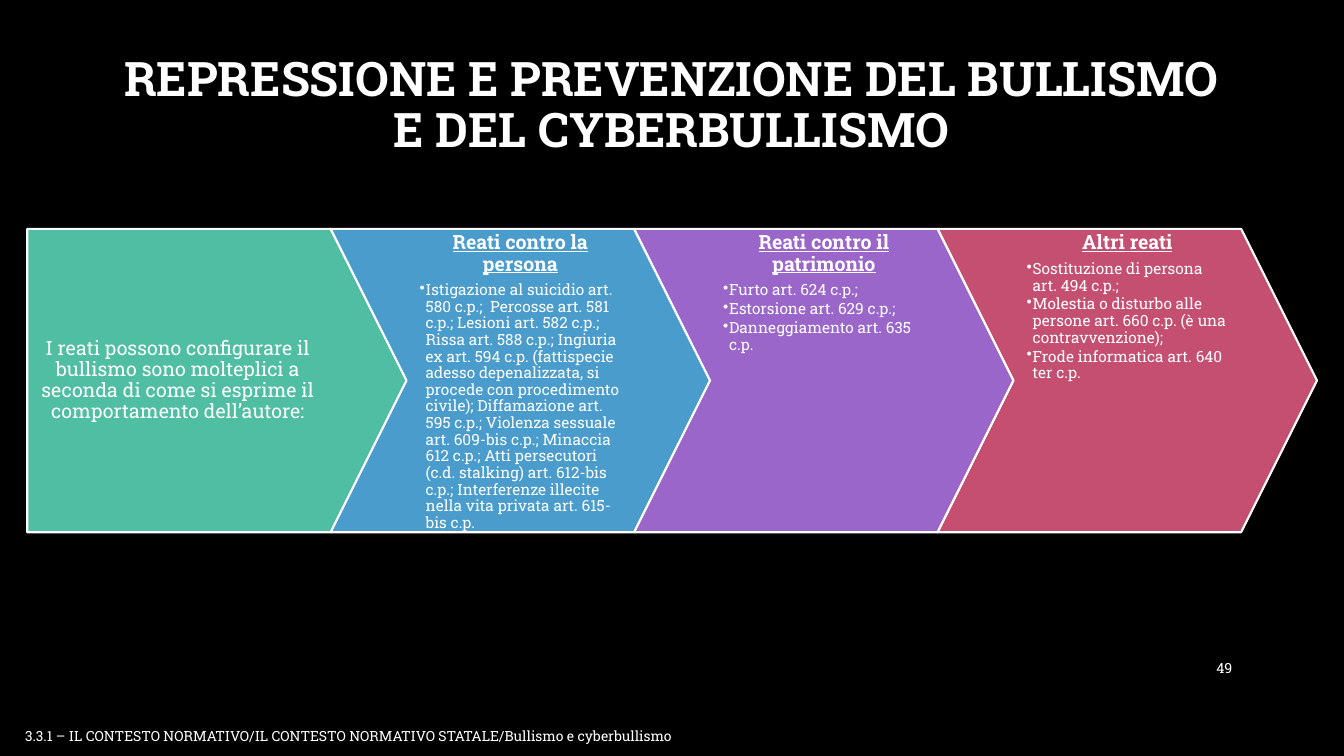
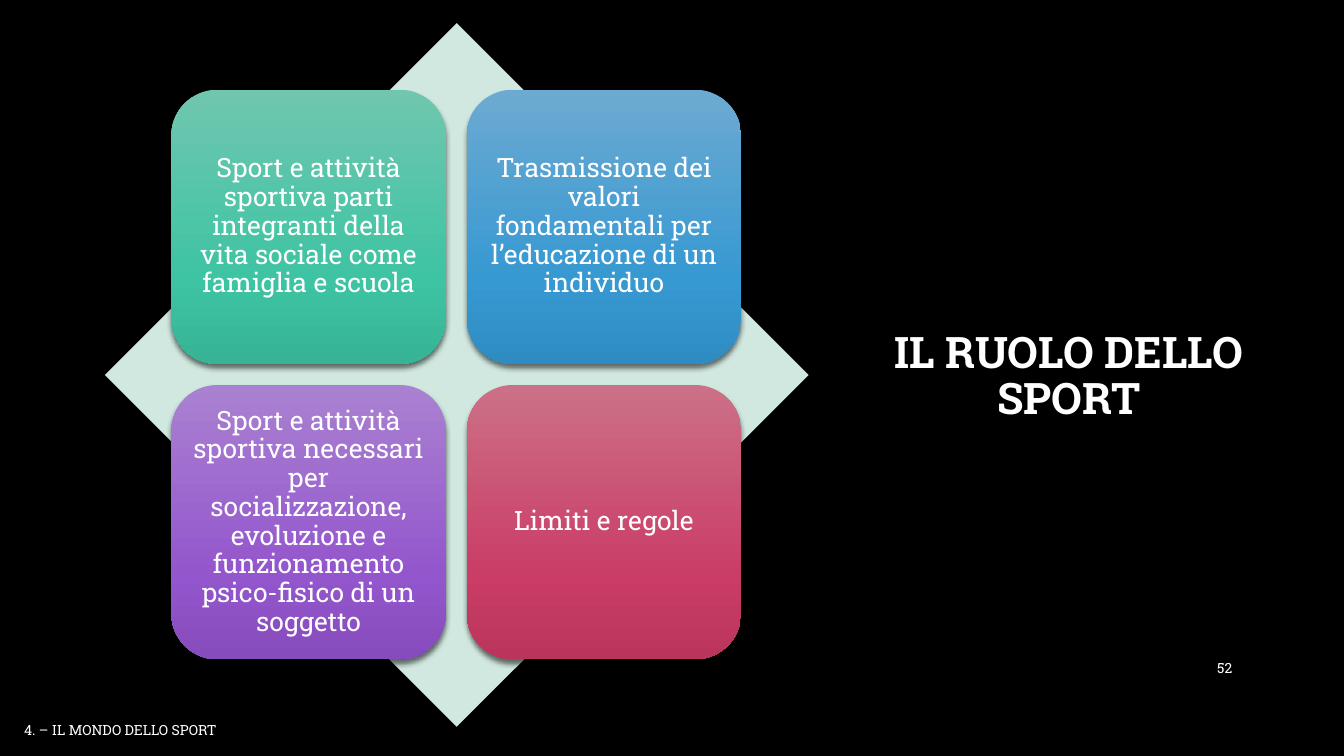
from dataclasses import dataclass

from lxml.etree import SubElement
from pptx import Presentation
from pptx.dml.color import RGBColor
from pptx.enum.shapes import MSO_SHAPE as Preset
from pptx.enum.text import MSO_ANCHOR as Anchor, MSO_AUTO_SIZE as AutoSize, PP_ALIGN as Align
from pptx.oxml.ns import qn
from pptx.util import Inches, Pt

FONT = "Roboto Slab"
BLACK = RGBColor(0x00, 0x00, 0x00)
WHITE = RGBColor(0xFF, 0xFF, 0xFF)
GREEN = RGBColor(0x50, 0xBE, 0xA3)
BLUE = RGBColor(0x4A, 0x9C, 0xCC)
PURPLE = RGBColor(0x9A, 0x66, 0xCA)
ROSE = RGBColor(0xC5, 0x4F, 0x71)
PALE_GREEN = RGBColor(0xD0, 0xE8, 0xE0)
GREEN_SHADES = (RGBColor(0x70, 0xC6, 0xAF), RGBColor(0x3E, 0xC4, 0xA3), RGBColor(0x37, 0xB3, 0x95))
BLUE_SHADES = (RGBColor(0x6D, 0xAA, 0xD2), RGBColor(0x37, 0x99, 0xD2), RGBColor(0x2F, 0x8C, 0xC2))
PURPLE_SHADES = (RGBColor(0xA9, 0x81, 0xD1), RGBColor(0x94, 0x56, 0xCD), RGBColor(0x86, 0x4B, 0xBC))
ROSE_SHADES = (RGBColor(0xCC, 0x70, 0x87), RGBColor(0xCA, 0x3D, 0x66), RGBColor(0xBA, 0x35, 0x5B))
GRADIENT_STOPS = (0, 69, 100)

ARROW_LEFT, ARROW_TOP, ARROW_HEIGHT = 0.27, 2.27, 3.01
ARROW_POINT = 0.25
ARROW_WIDTH = ARROW_HEIGHT * (1 + ARROW_POINT)
DIAMOND_LEFT, DIAMOND_TOP, DIAMOND_SIZE = 1.04, 0.23, 6.98
TILE_INSET, TILE_SIZE, TILE_STEP = 0.66, 2.72, 2.93


@dataclass(frozen=True)
class Box:
    left: float
    top: float
    width: float
    height: float

    def lengths(self) -> tuple:
        return tuple(Inches(value) for value in (self.left, self.top, self.width, self.height))


@dataclass(frozen=True)
class Arrow:
    color: RGBColor
    heading: str
    offences: tuple[str, ...] = ()


@dataclass(frozen=True)
class Tile:
    shades: tuple[RGBColor, ...]
    text: str


ARROWS = (
    Arrow(GREEN, "I reati possono configurare il bullismo sono molteplici a seconda di come "
                 "si esprime il comportamento dell’autore:"),
    Arrow(BLUE, "Reati contro la persona", (
        "Istigazione al suicidio art. 580 c.p.;  Percosse art. 581 c.p.; Lesioni art. 582 c.p.; "
        "Rissa art. 588 c.p.; Ingiuria ex art. 594 c.p. (fattispecie adesso depenalizzata, "
        "si procede con procedimento civile); Diffamazione art. 595 c.p.; Violenza sessuale "
        "art. 609-bis c.p.; Minaccia 612 c.p.; Atti persecutori (c.d. stalking) art. 612-bis "
        "c.p.; Interferenze illecite nella vita privata art. 615-bis c.p.",
    )),
    Arrow(PURPLE, "Reati contro il patrimonio", (
        "Furto art. 624 c.p.;",
        "Estorsione art. 629 c.p.;",
        "Danneggiamento art. 635 c.p.",
    )),
    Arrow(ROSE, "Altri reati", (
        "Sostituzione di persona art. 494 c.p.;",
        "Molestia o disturbo alle persone art. 660 c.p. (è una contravvenzione);",
        "Frode informatica art. 640 ter c.p.",
    )),
)

TILES = (
    Tile(GREEN_SHADES, "Sport e attività sportiva parti integranti della vita sociale "
                       "come famiglia e scuola"),
    Tile(BLUE_SHADES, "Trasmissione dei valori fondamentali per l’educazione di un individuo"),
    Tile(PURPLE_SHADES, "Sport e attività sportiva necessari per socializzazione, evoluzione "
                        "e funzionamento psico-fisico di un soggetto"),
    Tile(ROSE_SHADES, "Limiti e regole"),
)


def format_paragraph(paragraph, size: float, align=Align.CENTER, bold: bool = False,
                     underline: bool = False, line_spacing: float = 0.9,
                     space_after: float = 0) -> None:
    paragraph.alignment = align
    paragraph.line_spacing = line_spacing
    paragraph.space_before = Pt(0)
    paragraph.space_after = Pt(space_after)
    for run in paragraph.runs:
        run.font.name = FONT
        run.font.size = Pt(size)
        run.font.color.rgb = WHITE
        run.font.bold = bold
        run.font.underline = underline


def add_bullet(paragraph) -> None:
    paragraph.level = 1
    properties = paragraph._p.get_or_add_pPr()
    properties.set("marL", str(Inches(0.06)))
    properties.set("indent", str(-Inches(0.06)))
    SubElement(properties, qn("a:buChar")).set("char", "•")


def set_frame(shape, anchor, insets: tuple[float, float, float, float]):
    frame = shape.text_frame
    frame.word_wrap = True
    frame.auto_size = AutoSize.NONE
    frame.vertical_anchor = anchor
    frame.margin_left, frame.margin_top, frame.margin_right, frame.margin_bottom = map(Inches, insets)
    return frame


def add_preset(slide, preset, box: Box):
    shape = slide.shapes.add_shape(preset, *box.lengths())
    shape.shadow.inherit = False
    shape.line.fill.background()
    return shape


def add_drop_shadow(shape) -> None:
    effects = shape._element.spPr.find(qn("a:effectLst"))
    shadow = SubElement(effects, qn("a:outerShdw"), blurRad=str(Pt(4)), dist=str(Pt(3)),
                        dir="5400000", rotWithShape="0")
    color = SubElement(shadow, qn("a:srgbClr"), val=str(BLACK))
    SubElement(color, qn("a:alpha"), val="54000")


def fill_gradient(shape, shades: tuple[RGBColor, ...]) -> None:
    shape.fill.gradient()
    shape.fill.gradient_angle = 270
    stops = shape._element.spPr.find(qn("a:gradFill")).find(qn("a:gsLst"))
    for stop in list(stops):
        stops.remove(stop)
    for position, shade in zip(GRADIENT_STOPS, shades):
        stop = SubElement(stops, qn("a:gs"), pos=str(position * 1000))
        SubElement(stop, qn("a:srgbClr"), val=str(shade))


def add_label(slide, text: str, box: Box, align, anchor) -> None:
    label = slide.shapes.add_textbox(*box.lengths())
    frame = set_frame(label, anchor, (0.1, 0.05, 0.1, 0.05))
    frame.text = text
    format_paragraph(frame.paragraphs[0], 10, align, line_spacing=1.0)


def add_slide(presentation, title: str, title_box: Box, title_size: float,
              number: str, footer: str, footer_box: Box):
    slide = presentation.slides.add_slide(presentation.slide_layouts[5])
    heading = slide.shapes.title
    heading.left, heading.top, heading.width, heading.height = title_box.lengths()
    frame = set_frame(heading, Anchor.MIDDLE, (0.1, 0.05, 0.1, 0.05))
    frame.text = title
    format_paragraph(frame.paragraphs[0], title_size, bold=True)
    add_label(slide, number, Box(11.5, 6.43, 0.82, 0.4), Align.RIGHT, Anchor.MIDDLE)
    add_label(slide, footer, footer_box, Align.LEFT, Anchor.TOP)
    return slide


def add_arrow(slide, index: int, arrow: Arrow) -> None:
    preset = Preset.CHEVRON if index else Preset.PENTAGON
    box = Box(ARROW_LEFT + index * ARROW_HEIGHT, ARROW_TOP, ARROW_WIDTH, ARROW_HEIGHT)
    shape = add_preset(slide, preset, box)
    shape.adjustments[0] = ARROW_POINT
    shape.fill.solid()
    shape.fill.fore_color.rgb = arrow.color
    shape.line.color.rgb = WHITE
    shape.line.width = Pt(1.5)
    listed = bool(arrow.offences)
    anchor = Anchor.TOP if listed else Anchor.MIDDLE
    frame = set_frame(shape, anchor, (0.13, 0.04, 0.13 if listed else 0.53, 0.04))
    frame.text = arrow.heading
    format_paragraph(frame.paragraphs[0], 14, bold=listed, underline=listed, space_after=5)
    for offence in arrow.offences:
        paragraph = frame.add_paragraph()
        paragraph.text = offence
        format_paragraph(paragraph, 11, Align.LEFT, space_after=1.65)
        add_bullet(paragraph)


def add_tile(slide, index: int, tile: Tile) -> None:
    row, column = divmod(index, 2)
    box = Box(DIAMOND_LEFT + TILE_INSET + column * TILE_STEP,
              DIAMOND_TOP + TILE_INSET + row * TILE_STEP, TILE_SIZE, TILE_SIZE)
    shape = add_preset(slide, Preset.ROUNDED_RECTANGLE, box)
    fill_gradient(shape, tile.shades)
    add_drop_shadow(shape)
    frame = set_frame(shape, Anchor.MIDDLE, (0.08, 0.08, 0.08, 0.08))
    frame.text = tile.text
    format_paragraph(frame.paragraphs[0], 19, space_after=6.65)


def build_offences_slide(presentation) -> None:
    slide = add_slide(
        presentation, "REPRESSIONE E PREVENZIONE DEL BULLISMO E DEL CYBERBULLISMO",
        Box(1, 0.33, 11.32, 1.45), 34, "49",
        "3.3.1 – IL CONTESTO NORMATIVO/IL CONTESTO NORMATIVO STATALE/Bullismo e cyberbullismo",
        Box(0.15, 7.17, 6.67, 0.27))
    for index, arrow in enumerate(ARROWS):
        add_arrow(slide, index, arrow)


def build_sport_slide(presentation) -> None:
    slide = add_slide(
        presentation, "IL RUOLO DELLO SPORT", Box(8.61, 0.69, 3.98, 6.11), 31, "52",
        "4. – IL MONDO DELLO SPORT", Box(0.14, 7.11, 6.67, 0.27))
    diamond = add_preset(slide, Preset.DIAMOND,
                         Box(DIAMOND_LEFT, DIAMOND_TOP, DIAMOND_SIZE, DIAMOND_SIZE))
    diamond.fill.solid()
    diamond.fill.fore_color.rgb = PALE_GREEN
    add_drop_shadow(diamond)
    for index, tile in enumerate(TILES):
        add_tile(slide, index, tile)


def main() -> None:
    presentation = Presentation()
    presentation.slide_width = Inches(13.33)
    presentation.slide_height = Inches(7.5)
    background = presentation.slide_master.background.fill
    background.solid()
    background.fore_color.rgb = BLACK
    build_offences_slide(presentation)
    build_sport_slide(presentation)
    presentation.save("out.pptx")


if __name__ == "__main__":
    main()
